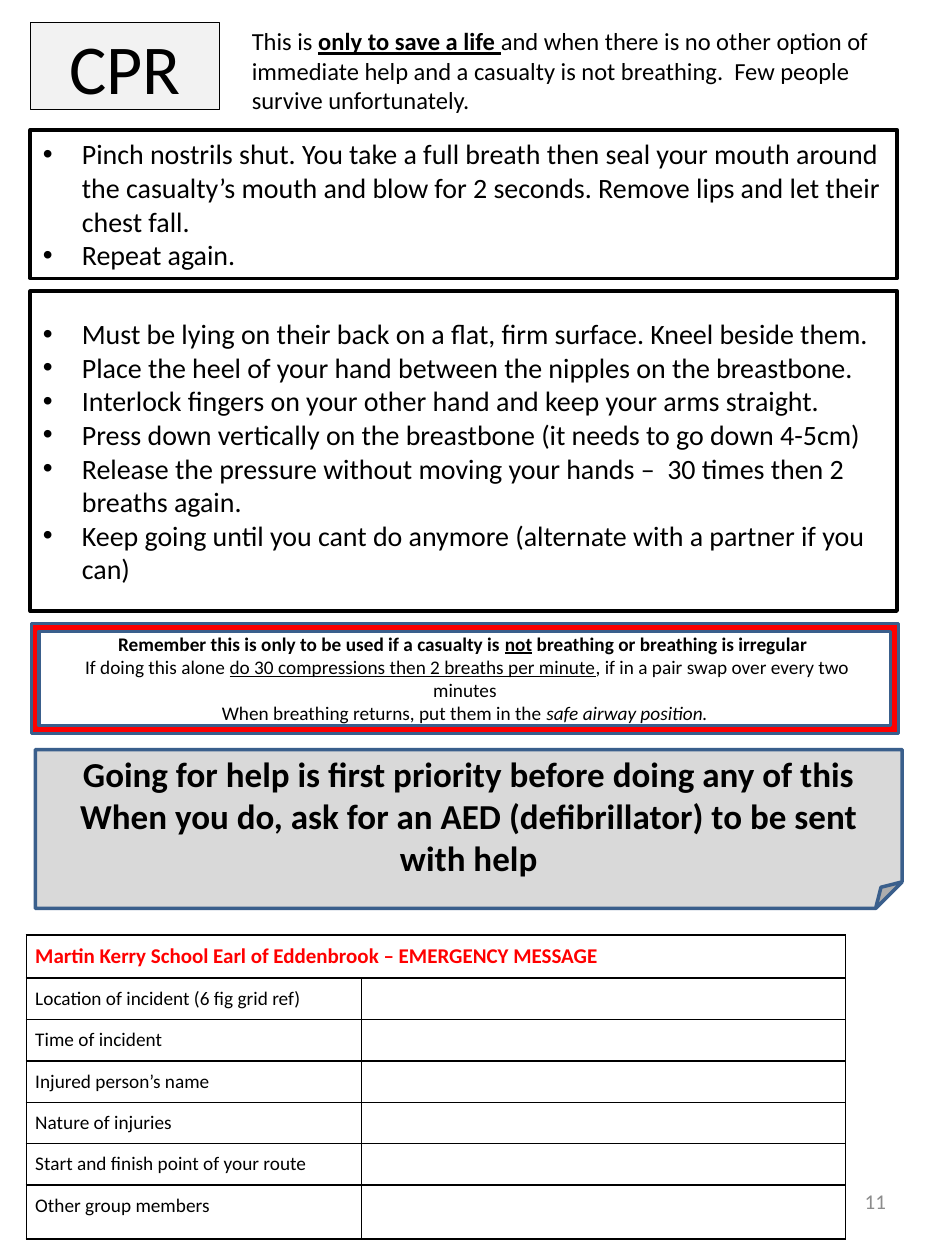
from dataclasses import dataclass

from lxml.etree import SubElement
from pptx import Presentation
from pptx.dml.color import RGBColor
from pptx.enum.shapes import MSO_SHAPE
from pptx.enum.text import MSO_ANCHOR, MSO_AUTO_SIZE, PP_ALIGN
from pptx.oxml.ns import qn
from pptx.util import Pt

SCALE = 9144  # EMU in one px, 100 px to the inch


@dataclass(frozen=True)
class Theme:
    face: str = "Calibri"
    ink: str = "000000"
    paper: str = "FFFFFF"
    pale: str = "F2F2F2"
    note: str = "D9D9D9"
    alert: str = "FF0000"
    edge: str = "3A5F8C"
    faint: str = "8C8C8C"
    title: int = 40
    call: int = 20
    body: int = 16
    intro: int = 14
    head: int = 12
    small: int = 11


THEME = Theme()

BREATHS = [
    "Pinch nostrils shut. You take a full breath then seal your mouth around "
    "the casualty’s mouth and blow for 2 seconds. Remove lips and let their chest fall.",
    "Repeat again.",
]
PRESSES = [
    "Must be lying on their back on a flat, firm surface. Kneel beside them.",
    "Place the heel of your hand between the nipples on the breastbone.",
    "Interlock fingers on your other hand and keep your arms straight.",
    "Press down vertically on the breastbone (it needs to go down 4-5cm)",
    "Release the pressure without moving your hands –  30 times then 2 breaths again.",
    "Keep going until you cant do anymore (alternate with a partner if you can)",
]
INTRO = [[
    ("This is ", ""),
    ("only to save a life ", "bu"),
    ("and when there is no other option of immediate help and a casualty "
     "is not breathing.  Few people survive unfortunately.", ""),
]]
REMIND = [
    [("Remember this is only to be used if a casualty is ", "b"), ("not", "bu"),
     (" breathing or breathing is irregular ", "b")],
    [(" If doing this alone ", ""),
     ("do 30 compressions then 2 breaths per minute", "u"),
     (", if in a pair swap over every two minutes", "")],
    [("When breathing returns, put them in the ", ""), ("safe airway position.", "i")],
]
CALL = [
    "Going for help is first priority before doing any of this",
    "When you do, ask for an AED (defibrillator) to be sent with help",
]
HEADING = "Martin Kerry School Earl of Eddenbrook – EMERGENCY MESSAGE"
FIELDS = [
    "Location of incident (6 fig grid ref)",
    "Time of incident",
    "Injured person’s name",
    "Nature of injuries",
    "Start and finish point of your route",
    "Other group members",
]


def px(*sizes):
    return [size * SCALE for size in sizes]


def rgb(code):
    return RGBColor.from_string(code)


def place(shape, box):
    shape.left, shape.top, shape.width, shape.height = px(*box)


def paint(shape, fill, line, width):
    shape.fill.solid()
    shape.fill.fore_color.rgb = rgb(fill)
    shape.line.color.rgb = rgb(line)
    shape.line.width = Pt(width)


def write(frame, lines, size, color=THEME.ink, align=PP_ALIGN.LEFT, bold=False):
    """Fill a frame; a line is a string or a list of (text, marks b, i, u)."""
    frame.word_wrap = True
    for num, line in enumerate(lines):
        para = frame.add_paragraph() if num else frame.paragraphs[0]
        para.alignment = align
        para.space_before = Pt(0)
        font = para.font
        font.name, font.size, font.bold = THEME.face, Pt(size), bold
        font.color.rgb = rgb(color)
        if isinstance(line, str):
            line = [(line, "")]
        for text, marks in line:
            run = para.add_run()
            run.text = text
            if "b" in marks:
                run.font.bold = True
            if "i" in marks:
                run.font.italic = True
            if "u" in marks:
                run.font.underline = True


def add_title(slide):
    title = slide.shapes.title
    place(title, (24, 18, 150, 69))
    paint(title, THEME.pale, THEME.ink, 0.75)
    frame = title.text_frame
    frame.auto_size = MSO_AUTO_SIZE.NONE
    frame.vertical_anchor = MSO_ANCHOR.MIDDLE
    write(frame, ["CPR"], THEME.title, align=PP_ALIGN.CENTER)


def add_list(holder, box, lines):
    place(holder, box)
    paint(holder, THEME.paper, THEME.ink, 2)
    frame = holder.text_frame
    frame.auto_size = MSO_AUTO_SIZE.NONE
    frame.vertical_anchor = MSO_ANCHOR.MIDDLE
    write(frame, lines, THEME.body)
    indent, = px(31)
    for para in frame.paragraphs:
        props = para._p.get_or_add_pPr()
        props.set("marL", str(indent))
        props.set("indent", str(-indent))


def add_text(slide, box, lines, size, anchor=MSO_ANCHOR.TOP, **style):
    frame = slide.shapes.add_textbox(*px(*box)).text_frame
    frame.vertical_anchor = anchor
    write(frame, lines, size, **style)


def add_panel(slide, kind, box, fill, lines, size, bold=False):
    panel = slide.shapes.add_shape(kind, *px(*box))
    panel.shadow.inherit = False
    paint(panel, fill, THEME.edge, 2)
    panel.text_frame.vertical_anchor = MSO_ANCHOR.MIDDLE
    write(panel.text_frame, lines, size, align=PP_ALIGN.CENTER, bold=bold)
    return panel


def set_cell(cell, text, size, **style):
    """Give a cell its margins, borders, fill and text."""
    edge, = px(7)
    cell.margin_left = cell.margin_right = edge
    cell.margin_top = cell.margin_bottom = edge
    props = cell._tc.get_or_add_tcPr()
    for side in ("a:lnL", "a:lnR", "a:lnT", "a:lnB"):
        line = SubElement(props, qn(side), w=str(Pt(1)))
        SubElement(SubElement(line, qn("a:solidFill")), qn("a:srgbClr"), val=THEME.ink)
    cell.fill.solid()
    cell.fill.fore_color.rgb = rgb(THEME.paper)
    write(cell.text_frame, [text] if text else [[]], size, **style)
    if not text:
        SubElement(cell.text_frame.paragraphs[0]._p, qn("a:endParaRPr"), sz=str(size * 100))


def add_form(slide):
    heights = [33] + [30] * (len(FIELDS) - 1) + [43]
    box = px(21, 742, 650, sum(heights))
    table = slide.shapes.add_table(len(heights), 2, *box).table
    table.first_row = table.horz_banding = False
    for col, width in zip(table.columns, px(266, 384)):
        col.width = width
    for row, height in zip(table.rows, px(*heights)):
        row.height = height
    table.cell(0, 0).merge(table.cell(0, 1))
    set_cell(table.cell(0, 0), HEADING, THEME.head, color=THEME.alert, bold=True)
    set_cell(table.cell(0, 1), "", THEME.head)
    for num, field in enumerate(FIELDS, 1):
        set_cell(table.cell(num, 0), field, THEME.small)
        set_cell(table.cell(num, 1), "", THEME.small)


def main():
    deck = Presentation()
    deck.slide_width, deck.slide_height = px(750, 1000)
    slide = deck.slides.add_slide(deck.slide_layouts[3])
    add_form(slide)
    add_text(slide, (538, 927, 175, 53), ["11"], THEME.head, MSO_ANCHOR.MIDDLE,
             color=THEME.faint, align=PP_ALIGN.RIGHT)
    add_title(slide)
    add_list(slide.placeholders[1], (24, 103, 688, 118), BREATHS)
    add_text(slide, (190, 16, 540, 81), INTRO, THEME.intro)
    add_list(slide.placeholders[2], (24, 231, 688, 254), PRESSES)
    frame = add_panel(slide, MSO_SHAPE.FRAME, (25, 495, 688, 87),
                      THEME.alert, REMIND, THEME.small)
    frame.adjustments[0] = 0.07
    add_panel(slide, MSO_SHAPE.FOLDED_CORNER, (28, 595, 688, 126),
              THEME.note, CALL, THEME.call, bold=True)
    deck.save("out.pptx")


if __name__ == "__main__":
    main()
